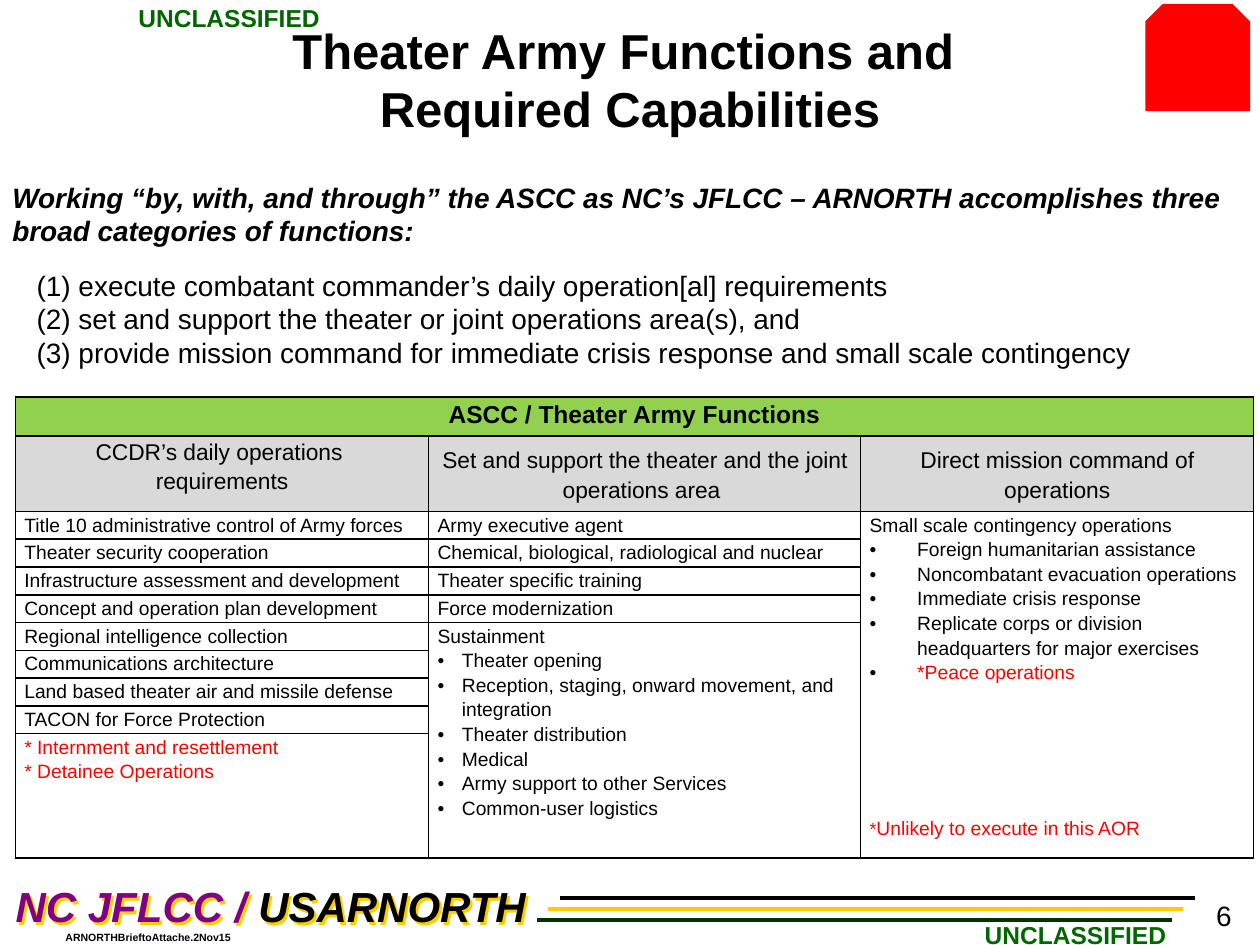
from dataclasses import dataclass

from lxml import etree
from pptx import Presentation
from pptx.dml.color import RGBColor
from pptx.enum.shapes import MSO_CONNECTOR, MSO_SHAPE
from pptx.enum.text import MSO_ANCHOR, PP_ALIGN
from pptx.oxml.ns import qn
from pptx.util import Cm, Pt

LEFT, CENTER, RIGHT = PP_ALIGN.LEFT, PP_ALIGN.CENTER, PP_ALIGN.RIGHT
TOP, MIDDLE = MSO_ANCHOR.TOP, MSO_ANCHOR.MIDDLE
STRAIGHT = MSO_CONNECTOR.STRAIGHT
SNIPPED = MSO_SHAPE.SNIP_2_SAME_RECTANGLE


@dataclass(frozen=True)
class Theme:
    font: str = "Arial"
    black: str = "000000"
    red: str = "FF0000"
    green: str = "006600"
    dark_green: str = "003300"
    gold: str = "FFCC00"
    purple: str = "800080"
    banner: str = "92D050"
    header: str = "D9D9D9"
    title: float = 28
    footer: float = 24
    body: float = 16
    marking: float = 14
    heading: float = 13
    cell: float = 11
    small: float = 10
    file_name: float = 6


THEME = Theme()


@dataclass(frozen=True)
class Run:
    text: str
    size: float
    color: str = THEME.black
    bold: bool = False
    italic: bool = False


@dataclass(frozen=True)
class Line:
    runs: tuple[Run, ...]
    align: PP_ALIGN = LEFT
    indent: float = 0
    bullet: bool = False
    before: float = 0
    spacing: float = 1.0


@dataclass(frozen=True)
class Label:
    left: float
    top: float
    width: float
    height: float
    lines: tuple[Line, ...]
    anchor: MSO_ANCHOR = TOP
    wrap: bool = True


@dataclass(frozen=True)
class Block:
    row: int
    column: int
    lines: tuple[Line, ...]
    last_row: int = 0
    last_column: int = 0
    fill: str = ""
    anchor: MSO_ANCHOR = TOP


def add_run(para, run: Run) -> None:
    for index, text in enumerate(run.text.split("\n")):
        if index:
            para.add_line_break()
            etree.SubElement(para._p[-1], qn("a:rPr"), sz=str(int(run.size * 100)))
        span = para.add_run()
        span.text = text
        span.font.name = THEME.font
        span.font.size = Pt(run.size)
        span.font.bold = run.bold
        span.font.italic = run.italic
        span.font.color.rgb = RGBColor.from_string(run.color)


def write_lines(frame, lines: tuple[Line, ...]) -> None:
    for index, line in enumerate(lines):
        para = frame.paragraphs[0] if index == 0 else frame.add_paragraph()
        para.alignment = line.align
        para.line_spacing = line.spacing
        para.space_before = Pt(line.before)
        properties = para._p.get_or_add_pPr()
        properties.set("marL", str(Cm(line.indent)))
        properties.set("indent", str(-Cm(line.indent) if line.bullet else 0))
        if line.bullet:
            color = etree.SubElement(properties, qn("a:buClr"))
            etree.SubElement(color, qn("a:srgbClr"), val=THEME.black)
            etree.SubElement(properties, qn("a:buFont"), typeface=THEME.font)
            etree.SubElement(properties, qn("a:buChar"), char="•")
        else:
            etree.SubElement(properties, qn("a:buNone"))
        for run in line.runs:
            add_run(para, run)


def add_label(page, label: Label):
    box = page.shapes.add_textbox(Cm(label.left), Cm(label.top), Cm(label.width), Cm(label.height))
    box.text_frame.word_wrap = label.wrap
    box.text_frame.vertical_anchor = label.anchor
    write_lines(box.text_frame, label.lines)
    return box


def add_gold_shadow(box) -> None:
    effects = etree.SubElement(box._element.spPr, qn("a:effectLst"))
    shadow = etree.SubElement(effects, qn("a:outerShdw"), dist="25400", dir="2700000", algn="ctr")
    etree.SubElement(shadow, qn("a:srgbClr"), val=THEME.gold)


def add_rule(page, left: float, top: float, color: str) -> None:
    rule = page.shapes.add_connector(STRAIGHT, Cm(left), Cm(top), Cm(left + 12.8), Cm(top))
    rule.line.color.rgb = RGBColor.from_string(color)
    rule.line.width = Pt(2.25)
    etree.SubElement(rule._element.spPr, qn("a:effectLst"))


def add_borders(cell) -> None:
    properties = cell._tc.get_or_add_tcPr()
    for index, side in enumerate(("a:lnL", "a:lnR", "a:lnT", "a:lnB")):
        border = etree.Element(qn(side), w=str(Pt(1)))
        fill = etree.SubElement(border, qn("a:solidFill"))
        etree.SubElement(fill, qn("a:srgbClr"), val=THEME.black)
        properties.insert(index, border)


def add_functions_table(page, blocks: list[Block]) -> None:
    widths = (8.33, 8.71, 7.92)
    heights = (0.79, 1.52, *[0.56] * 8, 2.51)
    table = page.shapes.add_table(len(heights), len(widths), Cm(0.31), Cm(8), Cm(sum(widths)), Cm(sum(heights))).table
    table.first_row = table.horz_banding = False
    for column, width in zip(table.columns, widths):
        column.width = Cm(width)
    for row, height in zip(table.rows, heights):
        row.height = Cm(height)
    for cell in table.iter_cells():
        cell.fill.background()
        add_borders(cell)
    for block in blocks:
        cell = table.cell(block.row, block.column)
        if block.last_row or block.last_column:
            cell.merge(table.cell(block.last_row or block.row, block.last_column or block.column))
        cell.margin_left = cell.margin_right = Cm(0.18)
        cell.margin_top = cell.margin_bottom = 0
        cell.vertical_anchor = block.anchor
        if block.fill:
            cell.fill.solid()
            cell.fill.fore_color.rgb = RGBColor.from_string(block.fill)
        write_lines(cell.text_frame, block.lines)


def cell_line(text: str, color: str = THEME.black, indent: float = 0) -> Line:
    return Line((Run(text, THEME.cell, color),), indent=indent, bullet=indent > 0, spacing=1.15)


def heading(text: str, size: float = THEME.heading, bold: bool = False) -> Line:
    return Line((Run(text, size, bold=bold),), CENTER, spacing=1.15)


def function_blocks() -> list[Block]:
    daily = ("Title 10 administrative control of Army forces", "Theater security cooperation",
             "Infrastructure assessment and development", "Concept and operation plan development",
             "Regional intelligence collection", "Communications architecture",
             "Land based theater air and missile defense", "TACON for Force Protection")
    support = ("Army executive agent", "Chemical, biological, radiological and nuclear",
               "Theater specific training", "Force modernization")
    sustainment = ("Theater opening", "Reception, staging, onward movement, and integration",
                   "Theater distribution", "Medical", "Army support to other Services", "Common-user logistics")
    contingency = ("Foreign humanitarian assistance", "Noncombatant evacuation operations",
                   "Immediate crisis response", "Replicate corps or division headquarters for major exercises")
    unlikely = ("* Internment and resettlement", "* Detainee Operations")
    footnote = Line((Run("*", THEME.small, THEME.red), Run("Unlikely to execute in this AOR", THEME.cell, THEME.red)),
                    before=75, spacing=1.15)
    return [
        Block(0, 0, (heading("ASCC / Theater Army Functions", THEME.marking, True),), last_column=2, fill=THEME.banner),
        Block(1, 0, (heading("CCDR’s daily operations "), heading("requirements")), fill=THEME.header),
        Block(1, 1, (heading("Set and support the theater and the joint operations area "),), fill=THEME.header, anchor=MIDDLE),
        Block(1, 2, (heading("Direct mission command of operations"),), fill=THEME.header, anchor=MIDDLE),
        *(Block(row, 0, (cell_line(text),)) for row, text in enumerate(daily, 2)),
        Block(10, 0, tuple(cell_line(text, THEME.red) for text in unlikely)),
        *(Block(row, 1, (cell_line(text),)) for row, text in enumerate(support, 2)),
        Block(6, 1, (cell_line("Sustainment"), *(cell_line(text, indent=0.49) for text in sustainment)), last_row=10),
        Block(2, 2, (cell_line("Small scale contingency operations"),
                     *(cell_line(text, indent=0.96) for text in contingency),
                     cell_line("*Peace operations", THEME.red, 0.96), footnote), last_row=10),
    ]


def main() -> None:
    deck = Presentation()
    deck.slide_width, deck.slide_height = Cm(25.4), Cm(19.05)
    page = deck.slides.add_slide(deck.slide_layouts[5])
    title = page.shapes.title
    title.left, title.top, title.width, title.height = Cm(1.27), Cm(0), Cm(22.86), Cm(3.18)
    title.text_frame.vertical_anchor = MIDDLE
    title_run = Run("Theater Army Functions and \nRequired Capabilities", THEME.title, bold=True)
    write_lines(title.text_frame, (Line((title_run,), CENTER),))
    badge = page.shapes.add_shape(SNIPPED, Cm(23.09), Cm(0.08), Cm(2.11), Cm(2.16))
    badge.shadow.inherit = False
    badge.fill.solid()
    badge.fill.fore_color.rgb = RGBColor.from_string(THEME.red)
    badge.line.fill.background()
    intro = "Working “by, with, and through” the ASCC as NC’s JFLCC – ARNORTH accomplishes three broad categories of functions:"
    categories = ("(1) execute combatant commander’s daily operation[al] requirements",
                  "(2) set and support the theater or joint operations area(s), and",
                  "(3) provide mission command for immediate crisis response and small scale contingency")
    add_label(page, Label(0, 3.51, 25.4, 4.65, (
        Line((Run(intro, THEME.body, bold=True, italic=True),)),
        *(Line((Run(text, THEME.body),), indent=0.49, before=0 if index else 12) for index, text in enumerate(categories)),
    )))
    add_functions_table(page, function_blocks())
    marking = Run("UNCLASSIFIED", THEME.marking, THEME.green, bold=True)
    add_label(page, Label(1.19, -0.08, 6.86, 0.86, (Line((marking,), CENTER),), MIDDLE))
    add_label(page, Label(17.08, 18.42, 6.68, 0.86, (Line((marking,), RIGHT),), MIDDLE))
    command = add_label(page, Label(0, 17.63, 11.15, 1.3, (Line((
        Run("NC JFLCC / ", THEME.footer, THEME.purple, True, True),
        Run("USARNORTH ", THEME.footer, THEME.black, True, True)), CENTER),)))
    add_gold_shadow(command)
    for index, color in enumerate((THEME.dark_green, THEME.gold, THEME.black)):
        add_rule(page, 10.82 + 0.23 * index, 18.54 - 0.22 * index, color)
    file_name = Run("ARNORTHBrieftoAttache.2Nov15", THEME.file_name, bold=True)
    add_label(page, Label(1.04, 18.64, 3.89, 0.51, (Line((file_name,), CENTER),), wrap=False))
    add_label(page, Label(23.95, 17.98, 1.45, 0.91, (Line((Run("6", THEME.body),), CENTER),)))
    deck.save("out.pptx")


if __name__ == "__main__":
    main()
